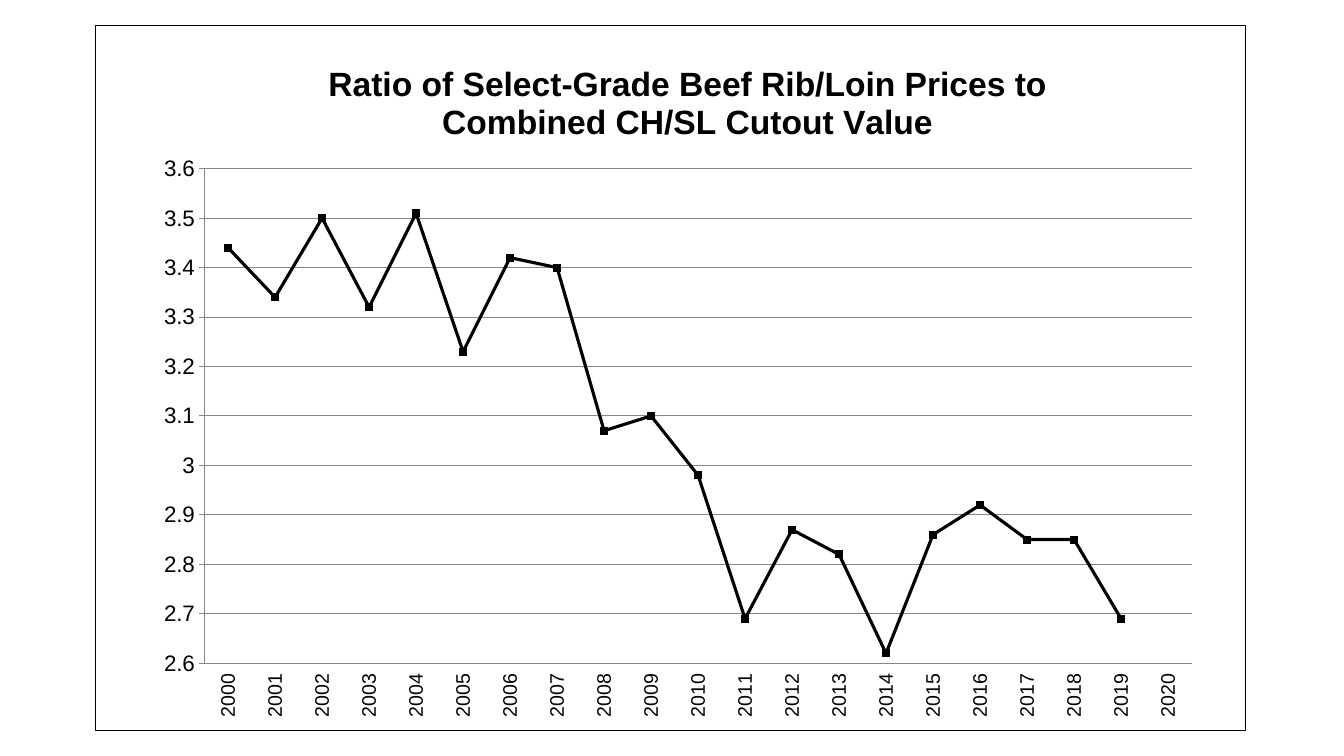
from pptx import Presentation
from pptx.chart.data import CategoryChartData
from pptx.dml.color import RGBColor
from pptx.enum.chart import XL_CHART_TYPE as ChartType
from pptx.enum.chart import XL_MARKER_STYLE as Marker
from pptx.enum.chart import XL_TICK_LABEL_POSITION as LabelPosition
from pptx.enum.chart import XL_TICK_MARK as TickMark
from pptx.oxml import parse_xml
from pptx.oxml.ns import nsdecls, qn
from pptx.util import Inches, Pt

FONT = "Arial"
COLORS = {"ink": "000000", "grid": "868686", "paper": "FFFFFF"}
YEARS = [str(year) for year in range(2000, 2021)]
RATIOS = [3.44, 3.34, 3.5, 3.32, 3.51, 3.23, 3.42, 3.4, 3.07, 3.1, 2.98,
          2.69, 2.87, 2.82, 2.62, 2.86, 2.92, 2.85, 2.85, 2.69, None]
TITLE_LINES = ["Ratio of Select-Grade Beef Rib/Loin Prices to",
               "Combined CH/SL Cutout Value"]


def rgb(name):
    return RGBColor.from_string(COLORS[name])


def style_font(font, size, bold=False):
    font.name = FONT
    font.size = Pt(size)
    font.bold = bold
    font.color.rgb = rgb("ink")


def style_line(line, color, width):
    line.color.rgb = rgb(color)
    line.width = Pt(width)


def place(element, index, target=None, **fractions):
    """Fix a chart part's place, in fractions of the chart area."""
    for layout in element.findall(qn("c:layout")):
        element.remove(layout)
    inner = f'<c:layoutTarget val="{target}"/>' if target else ""
    inner += "".join(f'<c:{key}Mode val="edge"/>' for key in "xy")
    inner += "".join(f'<c:{key} val="{value}"/>' for key, value in fractions.items())
    element.insert(index, parse_xml(
        f'<c:layout {nsdecls("c")}><c:manualLayout>{inner}</c:manualLayout></c:layout>'))


def add_border(chart):
    border = parse_xml(
        f'<c:spPr {nsdecls("c", "a")}>'
        f'<a:solidFill><a:srgbClr val="{COLORS["paper"]}"/></a:solidFill>'
        f'<a:ln w="{Pt(0.75)}"><a:solidFill><a:srgbClr val="{COLORS["ink"]}"/>'
        '</a:solidFill></a:ln></c:spPr>')
    chart.element.find(qn("c:chart")).addnext(border)


def add_title(chart):
    title = chart.chart_title
    frame = title.text_frame
    for number, line in enumerate(TITLE_LINES):
        paragraph = frame.add_paragraph() if number else frame.paragraphs[0]
        run = paragraph.add_run()
        run.text = line
        style_font(run.font, 24, bold=True)
    title.include_in_layout = False
    place(chart.element.find(".//" + qn("c:title")), 1, x=0.2, y=0.05)


def style_axes(chart):
    years, ratios = chart.category_axis, chart.value_axis
    years.major_tick_mark = TickMark.NONE
    years.tick_label_position = LabelPosition.LOW
    ratios.major_tick_mark = TickMark.OUTSIDE
    ratios.minimum_scale, ratios.maximum_scale = 2.6, 3.6
    ratios.major_unit = 0.1
    ratios.has_major_gridlines = True
    style_line(ratios.major_gridlines.format.line, "grid", 0.75)
    ratios.tick_labels.number_format = "General"
    ratios.tick_labels.number_format_is_linked = False
    for axis, size in ((years, 14), (ratios, 16)):
        axis.minor_tick_mark = TickMark.NONE
        style_font(axis.tick_labels.font, size)
        style_line(axis.format.line, "grid", 0.75)
    # Year labels read upwards
    body = years._element.find(qn("c:txPr")).find(qn("a:bodyPr"))
    body.set("rot", "-5400000")
    body.set("vert", "horz")


def style_ratio_line(chart):
    chart.plots[0].vary_by_categories = False
    ratio = chart.plots[0].series[0]
    ratio.smooth = False
    style_line(ratio.format.line, "ink", 2.25)
    marker = ratio.marker
    marker.style = Marker.SQUARE
    marker.size = 5
    marker.format.fill.solid()
    marker.format.fill.fore_color.rgb = rgb("ink")
    style_line(marker.format.line, "ink", 0.75)


def add_ratio_chart(slide):
    data = CategoryChartData()
    data.categories = YEARS
    data.add_series("Series 1", RATIOS)
    chart = slide.shapes.add_chart(
        ChartType.LINE_MARKERS, Inches(0.94), Inches(0.25),
        Inches(11.42), Inches(7), data).chart
    chart.has_legend = False
    style_font(chart.font, 18)
    add_border(chart)
    add_title(chart)
    style_axes(chart)
    style_ratio_line(chart)
    place(chart.element.find(".//" + qn("c:plotArea")), 0, "inner",
          x=0.095, y=0.203, w=0.858, h=0.702)


def main():
    deck = Presentation()
    deck.slide_width, deck.slide_height = Inches(13.33), Inches(7.5)
    # The heading belongs to the chart, so the layout is blank
    slide = deck.slides.add_slide(deck.slide_layouts[6])
    add_ratio_chart(slide)
    deck.save("out.pptx")


if __name__ == "__main__":
    main()
